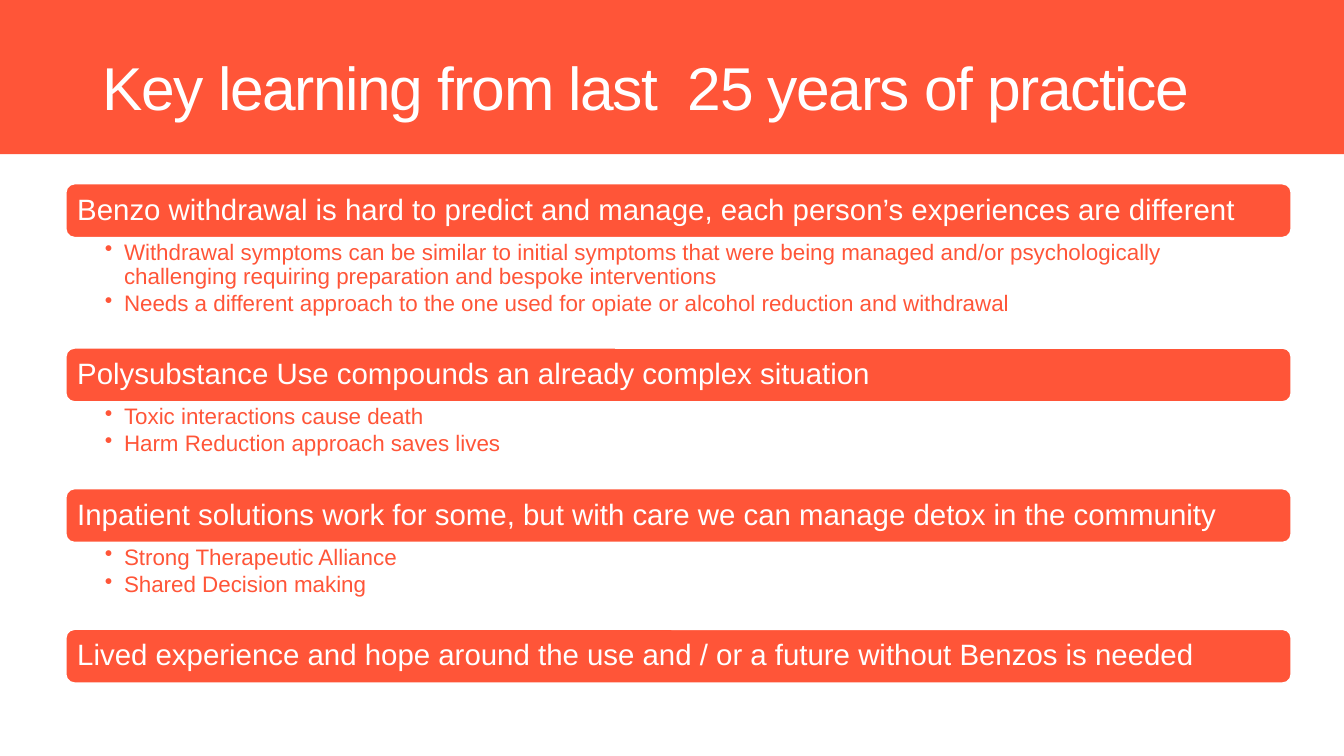
"""Build the slide of key learning points from 25 years of practice."""
from lxml import etree
from pptx import Presentation
from pptx import util as u
from pptx.dml.color import RGBColor
from pptx.enum import shapes, text
from pptx.oxml.ns import qn

CORAL = RGBColor(0xFF, 0x55, 0x38)
WHITE = RGBColor(0xFF, 0xFF, 0xFF)
FONT = "Arial"
BAR_HEIGHT = 0.54

SECTIONS = [
    ("Benzo withdrawal is hard to predict and manage, each person’s experiences are different", 1.09, [
        "Withdrawal symptoms can be similar to initial symptoms that were being managed "
        "and/or psychologically challenging requiring preparation and bespoke interventions",
        "Needs a different approach to the one used for opiate or alcohol reduction and withdrawal",
    ]),
    ("Polysubstance Use compounds an already complex situation", 0.855, [
        "Toxic interactions cause death",
        "Harm Reduction approach saves lives",
    ]),
    ("Inpatient solutions work for some, but with care we can manage detox in the community", 0.855, [
        "Strong Therapeutic Alliance",
        "Shared Decision making",
    ]),
    ("Lived experience and hope around the use and / or a future without Benzos is needed", 0, []),
]


def add_panel(page, kind, left, top, width, height):
    """Add a coral shape without shadow or outline."""
    panel = page.shapes.add_shape(kind, *map(u.Inches, (left, top, width, height)))
    panel.shadow.inherit = False
    panel.fill.solid()
    panel.fill.fore_color.rgb = CORAL
    panel.line.fill.background()
    return panel


def set_frame(box, anchor, left, top, right, bottom):
    """Wrap the text of a box, set its anchor and margins, and return its frame."""
    frame = box.text_frame
    frame.word_wrap = True
    frame.vertical_anchor = anchor
    frame.margin_left, frame.margin_top = u.Inches(left), u.Inches(top)
    frame.margin_right, frame.margin_bottom = u.Inches(right), u.Inches(bottom)
    return frame


def write(para, words, size, color):
    """Add one left-aligned run to a paragraph and return it."""
    para.alignment = text.PP_ALIGN.LEFT
    para.line_spacing = 0.9
    span = para.add_run()
    span.text = words
    span.font.name = FONT
    span.font.size = u.Pt(size)
    span.font.color.rgb = color
    return span


def add_header(page, width, height):
    """Draw the coral band with the slide title."""
    add_panel(page, shapes.MSO_SHAPE.RECTANGLE, 0, 0, width, height)
    box = page.shapes.add_textbox(*map(u.Inches, (0.92, 0.27, 11.76, height - 0.27)))
    frame = set_frame(box, text.MSO_ANCHOR.MIDDLE, 0.1, 0.05, 0.1, 0.05)
    span = write(frame.paragraphs[0], "Key learning from last  25 years of practice", 43.2, WHITE)
    span.font._element.set("spc", "-100")


def add_bar(page, left, top, width, heading):
    """Draw a rounded bar holding a section heading."""
    bar = add_panel(page, shapes.MSO_SHAPE.ROUNDED_RECTANGLE, left, top, width, BAR_HEIGHT)
    bar.line.color.rgb = WHITE
    bar.line.width = u.Pt(1.5)
    frame = set_frame(bar, text.MSO_ANCHOR.MIDDLE, 0.09, 0.09, 0.09, 0.09)
    write(frame.paragraphs[0], heading, 21, WHITE)


def add_bullets(page, left, top, width, height, points):
    """Write the bullet points of a section."""
    box = page.shapes.add_textbox(*map(u.Inches, (left, top, width, height)))
    frame = set_frame(box, text.MSO_ANCHOR.TOP, 0.39, 0.03, 0.16, 0.03)
    for index, point in enumerate(points):
        para = frame.add_paragraph() if index else frame.paragraphs[0]
        props = para._p.get_or_add_pPr()
        props.set("marL", str(u.Inches(0.19)))
        props.set("indent", str(u.Inches(-0.19)))
        etree.SubElement(props, qn("a:buChar")).set("char", "•")
        para.space_after = u.Pt(2.3)
        write(para, point, 16, CORAL)


def add_sections(page, left, top, width):
    """Stack the heading bars and their bullet points."""
    for heading, height, points in SECTIONS:
        add_bar(page, left, top, width, heading)
        top += BAR_HEIGHT
        if points:
            add_bullets(page, left, top, width, height, points)
        top += height


def main():
    """Build and save the deck."""
    deck = Presentation()
    deck.slide_width, deck.slide_height = u.Inches(13.33), u.Inches(7.5)
    page = deck.slides.add_slide(deck.slide_layouts[6])
    add_header(page, 13.33, 1.53)
    add_sections(page, 0.65, 1.82, 12.16)
    deck.save("out.pptx")


if __name__ == "__main__":
    main()
